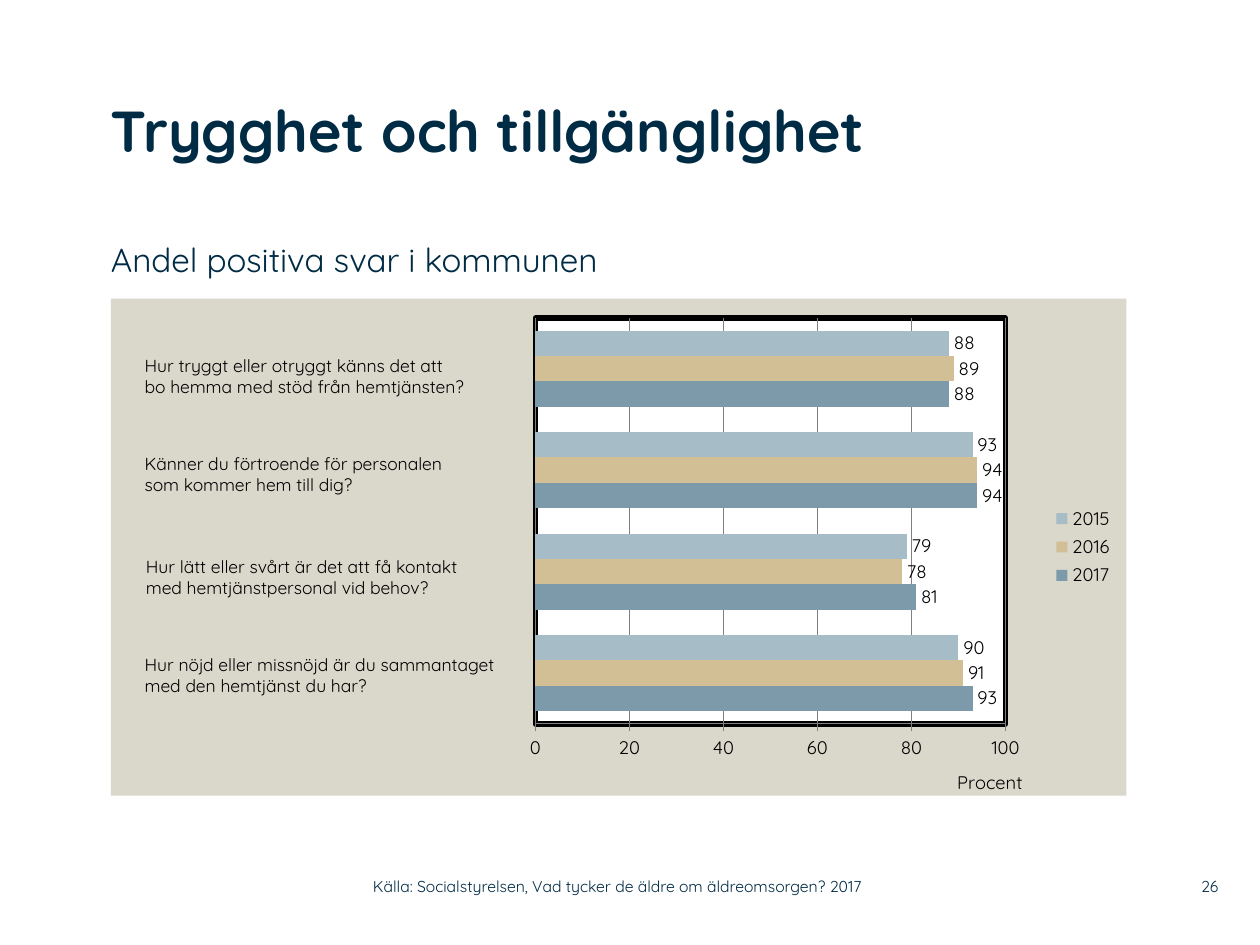
from lxml import etree
from pptx import Presentation
from pptx.chart.data import CategoryChartData
from pptx.dml.color import RGBColor
from pptx.enum.chart import XL_CHART_TYPE as ChartType
from pptx.enum.chart import XL_LABEL_POSITION as LabelPosition
from pptx.enum.chart import XL_LEGEND_POSITION as LegendPosition
from pptx.enum.chart import XL_TICK_MARK as TickMark
from pptx.enum.text import MSO_ANCHOR as Anchor
from pptx.enum.text import PP_ALIGN as Align
from pptx.oxml import parse_xml
from pptx.oxml.ns import nsdecls, qn
from pptx.util import Inches, Pt

FONT = "Quicksand"
NAVY = RGBColor(0x00, 0x2B, 0x45)
BLACK = RGBColor(0x00, 0x00, 0x00)
GRID_GRAY = RGBColor(0x80, 0x80, 0x80)

TITLE = "Trygghet och tillgänglighet"
SUBTITLE = "Andel positiva svar i kommunen"
SOURCE = "Källa: Socialstyrelsen, Vad tycker de äldre om äldreomsorgen? 2017"
PAGE_NUMBER = "26"
QUESTIONS = [
    (1.05, 2.77, "Hur tryggt eller otryggt känns det att\vbo hemma med stöd från hemtjänsten?"),
    (1.05, 3.55, "Känner du förtroende för personalen\vsom kommer hem till dig?"),
    (1.06, 4.36, "Hur lätt eller svårt är det att få kontakt\vmed hemtjänstpersonal vid behov?"),
    (1.05, 5.14, "Hur nöjd eller missnöjd är du sammantaget\vmed den hemtjänst du har?"),
]
CATEGORIES = ["1", "2", "3", "4"]
SERIES = [
    ("2017", (93, 81, 94, 88), RGBColor(0x7D, 0x9A, 0xAA)),
    ("2016", (91, 78, 94, 89), RGBColor(0xD3, 0xBF, 0x96)),
    ("2015", (90, 79, 93, 88), RGBColor(0xA6, 0xBC, 0xC6)),
]


def style_font(font, size, color=BLACK, bold=False):
    font.name = FONT
    font.size = Pt(size)
    font.bold = bold
    font.color.rgb = color


def write_text(shape, text, size, color, bold=False, inset=0, anchor=Anchor.TOP, align=Align.LEFT):
    frame = shape.text_frame
    frame.word_wrap = True
    frame.vertical_anchor = anchor
    if inset is not None:
        frame.margin_left = frame.margin_right = Inches(inset)
        frame.margin_top = frame.margin_bottom = Inches(inset)
    frame.text = text
    for paragraph in frame.paragraphs:
        paragraph.alignment = align
        for run in paragraph.runs:
            style_font(run.font, size, color, bold)


def add_text(slide, box, text, size, color, **options):
    shape = slide.shapes.add_textbox(*map(Inches, box))
    write_text(shape, text, size, color, **options)


def set_layout(parent, index, target="", **values):
    for old in parent.findall(qn("c:layout")):
        parent.remove(old)
    layout = etree.Element(qn("c:layout"))
    manual = etree.SubElement(layout, qn("c:manualLayout"))
    settings = {"layoutTarget": target} if target else {}
    settings.update(xMode="edge", yMode="edge", **values)
    for name, value in settings.items():
        etree.SubElement(manual, qn(f"c:{name}")).set("val", str(value))
    parent.insert(index, layout)


def area_format(fill, line):
    return parse_xml(
        f'<c:spPr {nsdecls("c", "a")}><a:solidFill><a:srgbClr val="{fill}"/></a:solidFill>{line}</c:spPr>'
    )


def add_chart(slide):
    data = CategoryChartData()
    data.categories = CATEGORIES
    for name, values, _ in SERIES:
        data.add_series(name, values)
    box = map(Inches, (0.88, 2.37, 8.06, 3.98))
    chart = slide.shapes.add_chart(ChartType.BAR_CLUSTERED, *box, data).chart
    chart.has_title = False
    style_font(chart.font, 10)

    plot = chart.plots[0]
    plot.gap_width = 100
    plot.overlap = 0
    plot.vary_by_categories = False
    for series, (_, _, color) in zip(plot.series, SERIES):
        series.format.fill.solid()
        series.format.fill.fore_color.rgb = color
        labels = series.data_labels
        labels.show_value = True
        labels.position = LabelPosition.OUTSIDE_END
        style_font(labels.font, 10.5)

    chart.category_axis.visible = False
    axis = chart.value_axis
    axis.minimum_scale, axis.maximum_scale, axis.major_unit = 0, 100, 20
    axis.major_tick_mark = TickMark.OUTSIDE
    axis.has_major_gridlines = True
    for line in (axis.major_gridlines.format.line, axis.format.line):
        line.color.rgb = GRID_GRAY
        line.width = Pt(0.75)
    style_font(axis.tick_labels.font, 10.5)
    axis.axis_title.text_frame.text = "Procent"
    style_font(axis.axis_title.text_frame.paragraphs[0].runs[0].font, 10.5)
    set_layout(axis.axis_title._element, 1, x=0.83, y=0.94)

    chart.has_legend = True
    chart.legend.position = LegendPosition.RIGHT
    chart.legend.include_in_layout = False
    style_font(chart.legend.font, 10.5)

    space = chart._chartSpace
    chart_node = space.find(qn("c:chart"))
    plot_area = chart_node.find(qn("c:plotArea"))
    set_layout(plot_area, 0, "inner", x=0.418, y=0.039, w=0.463, h=0.817)
    border = '<a:ln w="38100" cmpd="dbl"><a:solidFill><a:srgbClr val="000000"/></a:solidFill></a:ln>'
    plot_area.append(area_format("FFFFFF", border))
    chart_node.addnext(area_format("DAD7CB", "<a:ln><a:noFill/></a:ln>"))


def main():
    presentation = Presentation()
    presentation.slide_width = Inches(10)
    presentation.slide_height = Inches(7.5)
    slide = presentation.slides.add_slide(presentation.slide_layouts[5])

    title = slide.shapes.title
    title.left, title.top, title.width, title.height = map(Inches, (0.88, 0.75, 8.36, 1.42))
    write_text(title, TITLE, 33, NAVY, bold=True)
    add_text(slide, (0.88, 1.9, 6.93, 0.45), SUBTITLE, 19, NAVY)
    add_chart(slide)
    for left, top, question in QUESTIONS:
        add_text(slide, (left, top, 3.1, 0.44), question, 10, BLACK, inset=None)
    add_text(slide, (9.2, 6.89, 0.47, 0.29), PAGE_NUMBER, 9, NAVY, anchor=Anchor.MIDDLE, align=Align.RIGHT)
    add_text(slide, (2.96, 6.89, 4.43, 0.29), SOURCE, 9, NAVY, anchor=Anchor.MIDDLE)
    presentation.save("out.pptx")


if __name__ == "__main__":
    main()
